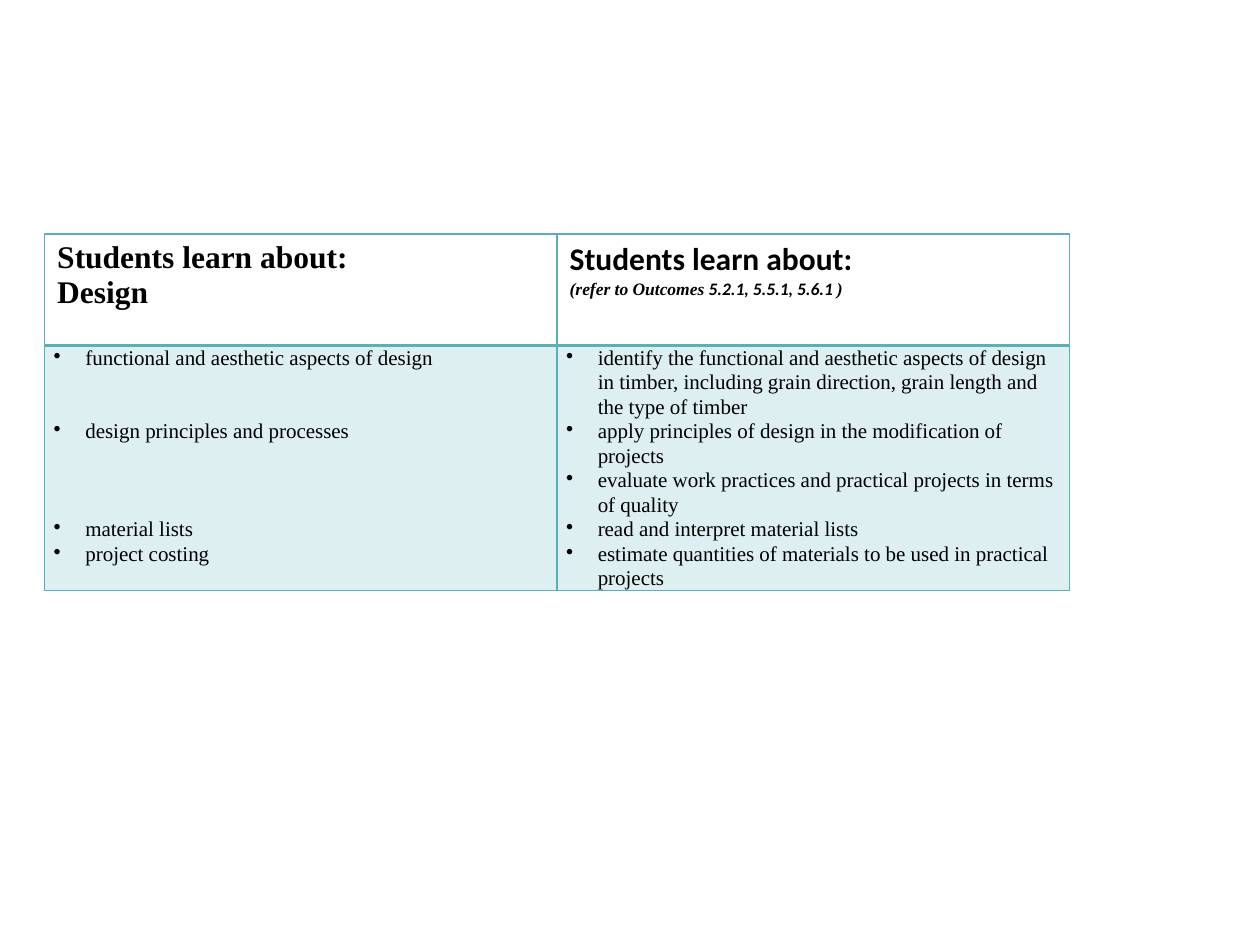
from lxml import etree
from pptx import Presentation, util as u
from pptx.dml import color
from pptx.oxml import ns

SERIF, SANS = "Times New Roman", "Calibri"
TEAL, BLACK = "59B0B9", "000000"
LINE = 14  # points per body line
INDENT = u.Cm(0.64)

# Each header is a list of lines; each line is a list of (text, font, size, italic).
HEADERS = [
    [[("Students learn about:", SERIF, 18, False)],
     [("Design", SERIF, 18, False)]],
    [[("Students learn about:", SANS, 18, False)],
     [("(refer to Outcomes ", SERIF, 10, True),
      ("5.2.1, 5.5.1, 5.6.1 ", SANS, 10, True),
      (")", SERIF, 10, True)]],
]
# Each bullet is (lines left free above it, text).
BULLETS = [
    [(0, "functional and aesthetic aspects of design"),
     (2, "design principles and processes"),
     (3, "material lists"),
     (0, "project costing")],
    [(0, "identify the functional and aesthetic aspects of design in timber, "
         "including grain direction, grain length and the type of timber"),
     (0, "apply principles of design in the modification of projects"),
     (0, "evaluate work practices and practical projects in terms of quality"),
     (0, "read and interpret material lists"),
     (0, "estimate quantities of materials to be used in practical projects")],
]


def rgb(value):
    return color.RGBColor.from_string(value)


def add_child(parent, tag, **attributes):
    child = etree.SubElement(parent, ns.qn(tag))
    for name, value in attributes.items():
        child.set(name, str(value))
    return child


def set_borders(cell, **widths):
    """Draw the four sides; call before the fill, which must follow them."""
    properties = cell._tc.get_or_add_tcPr()
    for side in "LRTB":
        line = add_child(properties, f"a:ln{side}", w=u.Pt(widths.get(side, 1)))
        add_child(add_child(line, "a:solidFill"), "a:srgbClr", val=TEAL)


def tint(cell, value, percent):
    cell.fill.solid()
    cell.fill.fore_color.rgb = rgb(value)
    shade = cell._tc.tcPr.find(ns.qn("a:solidFill"))[0]
    add_child(shade, "a:alpha", val=percent * 1000)


def make_bullet(para):
    properties = para._p.get_or_add_pPr()
    properties.set("marL", str(INDENT))
    properties.set("indent", str(-INDENT))
    add_child(properties, "a:buChar", char="•")
    add_child(add_child(properties, "a:tabLst"), "a:tab", pos=INDENT, algn="l")


def add_span(para, text, font, size, bold=False, italic=False):
    span = para.add_run()
    span.text = text
    span.font.name, span.font.size = font, u.Pt(size)
    span.font.bold, span.font.italic = bold, italic
    span.font.color.rgb = rgb(BLACK)


def paragraphs(cell, items):
    """Pair every item with its own paragraph of the cell."""
    frame = cell.text_frame
    for index, item in enumerate(items):
        yield (frame.add_paragraph() if index else frame.paragraphs[0]), item


def fill_header(cell, lines):
    set_borders(cell, B=2)
    cell.fill.background()
    for para, spans in paragraphs(cell, lines):
        for text, font, size, italic in spans:
            add_span(para, text, font, size, bold=True, italic=italic)


def fill_body(cell, bullets):
    set_borders(cell, T=2)
    tint(cell, TEAL, 20)
    cell.margin_left = cell.margin_right = u.Cm(0.18)
    cell.margin_top = cell.margin_bottom = 0
    for para, (gap, text) in paragraphs(cell, bullets):
        make_bullet(para)
        para.line_spacing = u.Pt(LINE)
        if gap:
            para.space_before = u.Pt(gap * LINE)
        add_span(para, text, SERIF, 12)


deck = Presentation()
deck.slide_width, deck.slide_height = u.Cm(25.4), u.Cm(19.05)
page = deck.slides.add_slide(deck.slide_layouts[6])
table = page.shapes.add_table(
    2, 2, u.Cm(0.9), u.Cm(4.72), u.Cm(20.66), u.Cm(7.18)).table
table.first_row = table.horz_banding = False
for row, height in zip(table.rows, (2.24, 4.94)):
    row.height = u.Cm(height)
for column, (header, bullets) in enumerate(zip(HEADERS, BULLETS)):
    fill_header(table.cell(0, column), header)
    fill_body(table.cell(1, column), bullets)
deck.save("out.pptx")
